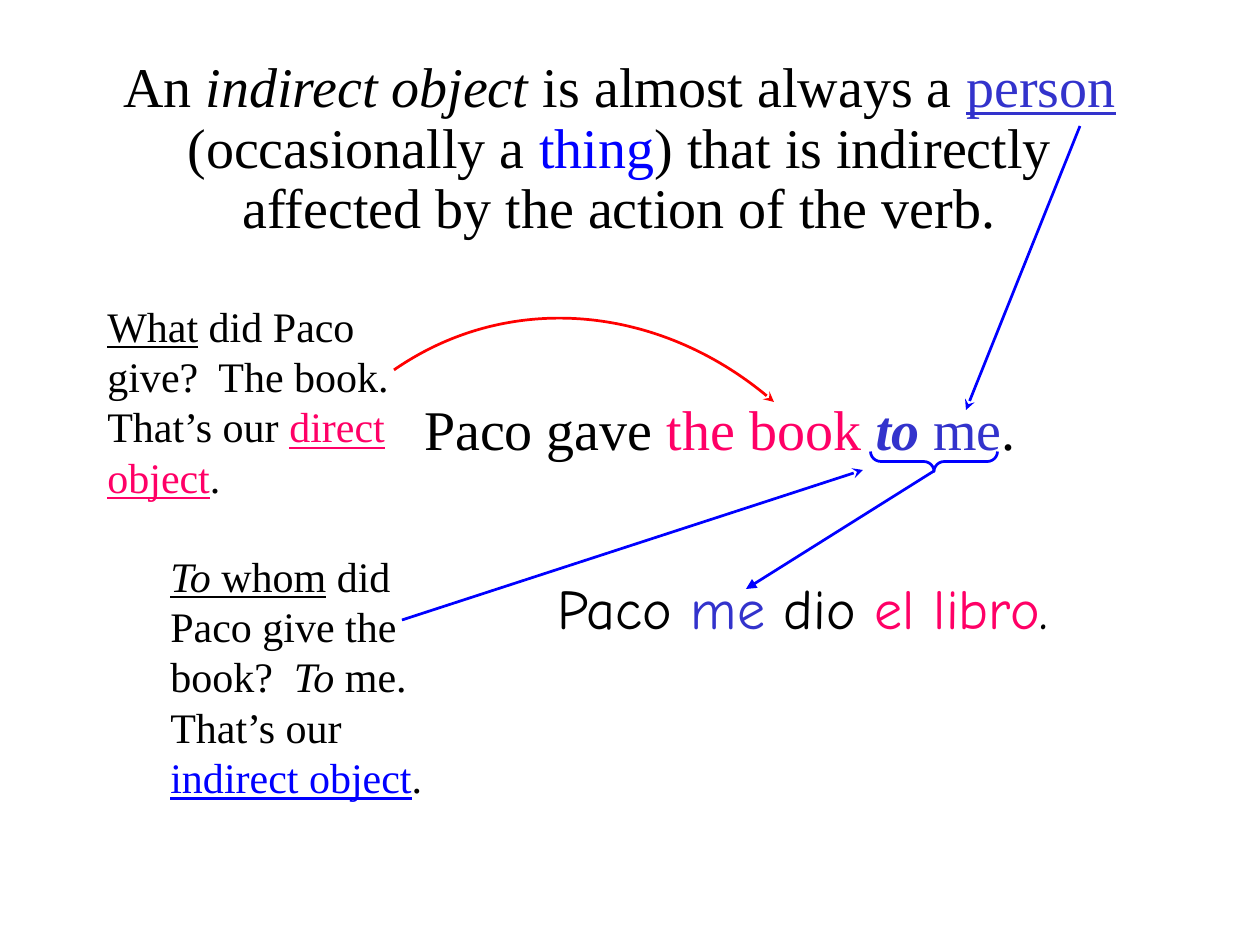
from pptx import Presentation
from pptx.dml.color import RGBColor
from pptx.enum.shapes import MSO_CONNECTOR as Connector, MSO_SHAPE as Shape
from pptx.enum.text import MSO_ANCHOR as Anchor, MSO_AUTO_SIZE as AutoSize, PP_ALIGN as Align
from pptx.oxml.ns import qn
from pptx.util import Emu, Pt
from lxml.etree import SubElement

SCALE = 914400 / 126
SERIF = "Times New Roman"
BLACK, BLUE, INDIGO, PINK, RED = "000000", "0000FF", "3333CC", "FF0066", "FF0000"


def px(*lengths):
    return [Emu(round(length * SCALE)) for length in lengths]


def color(value):
    return RGBColor.from_string(value)


def add_span(para, text, size=24, font=SERIF, fill=BLACK, **styles):
    span = para.add_run()
    span.text = text
    span.font.size = Pt(size)
    span.font.name = font
    span.font.color.rgb = color(fill)
    for name, value in styles.items():
        setattr(span.font, name, value)


def fill_text(box, spans, align=Align.LEFT, spacing=None, **defaults):
    frame = box.text_frame
    frame.word_wrap = True
    frame.auto_size = AutoSize.NONE
    frame.vertical_anchor = Anchor.TOP
    para = frame.paragraphs[0]
    para.alignment = align
    para.line_spacing = spacing
    for text, styles in spans:
        add_span(para, text, **{**defaults, **styles})


def add_text(page, place, spans, **formats):
    fill_text(page.shapes.add_textbox(*px(*place)), spans, **formats)


def add_title(page, place, spans, **formats):
    title = page.shapes.title
    title.left, title.top, title.width, title.height = px(*place)
    fill_text(title, spans, **formats)


def style_line(shape, stroke, head=None):
    shape.line.color.rgb = color(stroke)
    shape.line.width = Pt(1.55)
    if head:
        SubElement(shape.line._get_or_add_ln(), qn("a:tailEnd"), type=head)


def add_arrow(page, start, end, head="stealth"):
    arrow = page.shapes.add_connector(Connector.STRAIGHT, *px(*start, *end))
    style_line(arrow, BLUE, head)
    SubElement(arrow._element.spPr, qn("a:effectLst"))


def add_curved_arrow(page, start, *points):
    builder = page.shapes.build_freeform(*start, scale=SCALE)
    builder.add_line_segments(points, close=False)
    curve = builder.convert_to_shape()
    outline = curve._element.spPr.find(".//" + qn("a:path"))
    bezier = SubElement(outline, qn("a:cubicBezTo"))
    for segment in outline.findall(qn("a:lnTo")):
        bezier.append(segment[0])
        outline.remove(segment)
    curve.fill.background()
    curve.shadow.inherit = False
    style_line(curve, RED, "stealth")


def add_brace(page, place):
    brace = page.shapes.add_shape(Shape.RIGHT_BRACE, *px(*place))
    brace.rotation = 90
    brace.adjustments[0] = 0.52
    brace.fill.background()
    brace.shadow.inherit = False
    style_line(brace, BLUE)


def main():
    deck = Presentation()
    deck.slide_width, deck.slide_height = px(1260, 945)
    page = deck.slides.add_slide(deck.slide_layouts[5])

    add_title(page, (105, 53, 1029, 242), [
        ("An ", {}), ("indirect object", {"italic": True}), (" is almost always a ", {}),
        ("person", {"fill": INDIGO, "underline": True}), (" (occasionally a ", {}),
        ("thing", {"fill": BLUE}),
        (") that is indirectly affected by the action of the verb.", {}),
    ], align=Align.CENTER, spacing=0.9, size=32)
    add_text(page, (410, 388, 620, 95), [
        ("Paco gave ", {}), ("the book ", {"fill": PINK}),
        ("to", {"fill": INDIGO, "bold": True, "italic": True}),
        (" me", {"fill": INDIGO}), (".", {}),
    ], align=Align.CENTER, size=32)
    add_text(page, (514, 567, 578, 95), [
        ("Paco ", {}), ("me", {"fill": INDIGO}), (" dio ", {}),
        ("el libro", {"fill": PINK}), (".", {}),
    ], align=Align.CENTER, size=32, font="Comic Neue")
    add_text(page, (95, 294, 315, 214), [
        ("What", {"underline": True}), (" did Paco give?  The book. That’s our ", {}),
        ("direct object", {"fill": PINK, "underline": True}), (".", {}),
    ])
    add_text(page, (158, 544, 315, 265), [
        ("To", {"italic": True, "underline": True}), (" whom", {"underline": True}),
        (" did Paco give the book?  ", {}), ("To", {"italic": True}),
        (" me. That’s our ", {}),
        ("indirect object", {"fill": BLUE, "underline": True}), (".", {}),
    ])

    add_brace(page, (924, 398, 20, 127))
    add_arrow(page, (934, 471), (746, 589), head="triangle")
    add_arrow(page, (402, 620), (863, 470))
    add_arrow(page, (1080, 126), (966, 410))
    add_curved_arrow(page, (394, 370), (508, 291), (663, 305), (774, 402))
    deck.save("out.pptx")


if __name__ == "__main__":
    main()
